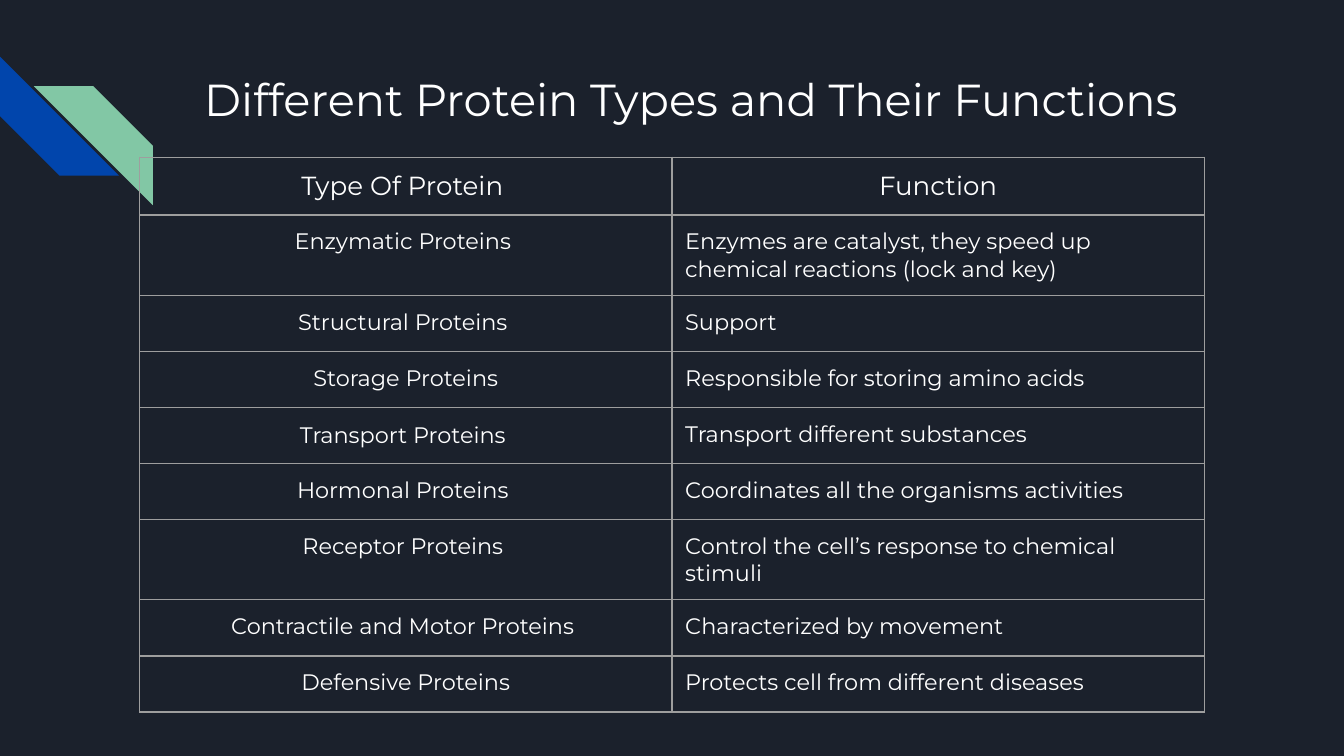
from lxml import etree
from pptx import Presentation
from pptx import util as u
from pptx.dml.color import RGBColor
from pptx.enum import shapes, text
from pptx.oxml import ns

COLORS = {
    "night": "1B212C",
    "blue": "0145AC",
    "green": "82C7A5",
    "grid": "9E9E9E",
    "white": "FFFFFF",
}
FONT = "Montserrat"
HEADER = ("Type Of Protein ", "Function")
PROTEINS = [
    ("Enzymatic Proteins ", "Enzymes are catalyst, they speed up chemical reactions (lock and key)"),
    ("Structural Proteins ", "Support"),
    ("Storage Proteins", "Responsible for storing amino acids"),
    ("Transport Proteins ", "Transport different substances"),
    ("Hormonal Proteins ", "Coordinates all the organisms activities"),
    ("Receptor Proteins ", "Control the cell’s response to chemical stimuli"),
    ("Contractile and Motor Proteins ", "Characterized by movement"),
    ("Defensive Proteins", "Protects cell from different diseases"),
]


def rgb(name):
    return RGBColor.from_string(COLORS[name])


def add_span(para, words, size):
    span = para.add_run()
    span.text = words
    span.font.name = FONT
    span.font.size = u.Pt(size)
    span.font.color.rgb = rgb("white")


def add_stripe(page, left, top, side, color):
    stripe = page.shapes.add_shape(
        shapes.MSO_SHAPE.DIAGONAL_STRIPE, u.Cm(left), u.Cm(top), u.Cm(side), u.Cm(side))
    stripe.adjustments[0] = 0.5
    stripe.shadow.inherit = False
    stripe.fill.solid()
    stripe.fill.fore_color.rgb = rgb(color)
    stripe.line.fill.background()
    return stripe


def add_corner(page, left, top, side):
    """Two diagonal stripes, the second offset to the lower right."""
    add_stripe(page, left, top, side, "blue").rotation = 270
    green = add_stripe(page, left + 0.64, top + 0.56, side, "green")
    green._element.spPr.xfrm.set("flipH", "1")


def add_title(page, left, top, width, height):
    box = page.shapes.add_textbox(u.Cm(left), u.Cm(top), u.Cm(width), u.Cm(height))
    frame = box.text_frame
    frame.word_wrap = True
    frame.margin_left = frame.margin_right = u.Cm(0.25)
    frame.margin_top = frame.margin_bottom = u.Cm(0.25)
    add_span(frame.paragraphs[0], "Different Protein Types and Their Functions", 24)


def style_cell(cell):
    """Thin grid lines, no fill, equal margins."""
    properties = cell._tc.get_or_add_tcPr()
    for side in ("lnL", "lnR", "lnT", "lnB"):
        line = etree.SubElement(properties, ns.qn("a:" + side), w=str(u.Pt(0.75)))
        fill = etree.SubElement(line, ns.qn("a:solidFill"))
        etree.SubElement(fill, ns.qn("a:srgbClr"), val=COLORS["grid"])
    cell.fill.background()
    cell.margin_left = cell.margin_right = u.Cm(0.25)
    cell.margin_top = cell.margin_bottom = u.Cm(0.25)


def add_protein_table(page, left, top, width, row_height):
    rows = [HEADER] + PROTEINS
    table = page.shapes.add_table(
        len(rows), len(HEADER), u.Cm(left), u.Cm(top),
        u.Cm(width), u.Cm(row_height * len(rows))).table
    table.first_row = table.horz_banding = False
    for r, row in enumerate(rows):
        for c, words in enumerate(row):
            cell = table.cell(r, c)
            style_cell(cell)
            para = cell.text_frame.paragraphs[0]
            # Header and first column are centred
            centred = r == 0 or c == 0
            para.alignment = text.PP_ALIGN.CENTER if centred else text.PP_ALIGN.LEFT
            add_span(para, words, 14 if r == 0 else 12)
            if words.startswith("Transport Proteins"):
                cell.vertical_anchor = text.MSO_ANCHOR.MIDDLE


def main():
    deck = Presentation()
    deck.slide_width, deck.slide_height = u.Cm(25.4), u.Cm(14.29)
    page = deck.slides.add_slide(deck.slide_layouts[6])
    page.background.fill.solid()
    page.background.fill.fore_color.rgb = rgb("night")

    add_corner(page, 0, 1.07, 2.25)
    add_title(page, 3.61, 1.1, 19.56, 2.54)
    add_protein_table(page, 2.64, 2.97, 20.12, 1.06)
    deck.save("out.pptx")


if __name__ == "__main__":
    main()
